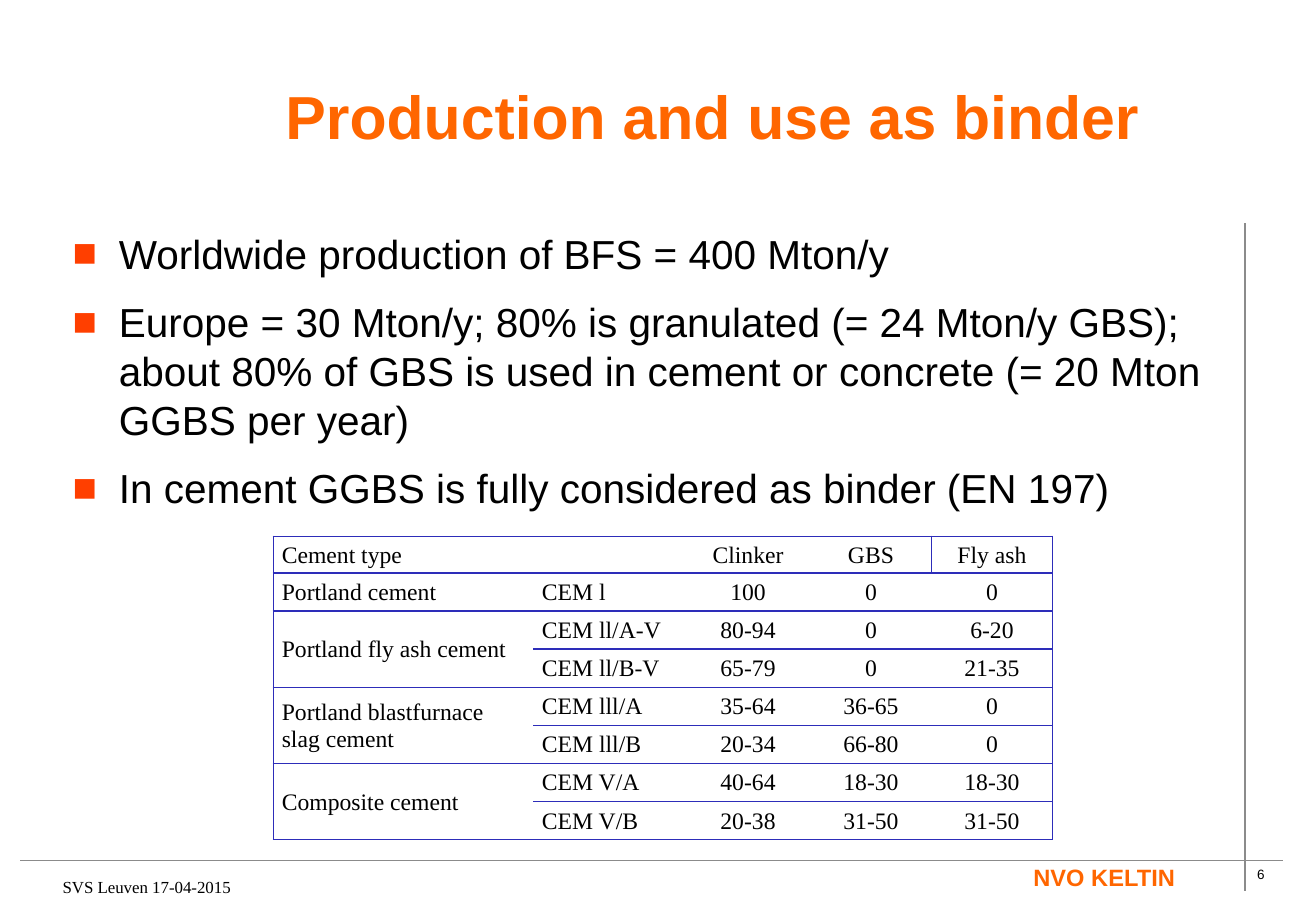
from dataclasses import dataclass
from typing import Any

from lxml import etree
from pptx import Presentation
from pptx import util as u
from pptx.dml.color import RGBColor
from pptx.enum import shapes, text
from pptx.oxml import ns

COLUMNS, ROWS = 130, 90
BLACK, WHITE, ORANGE, BULLET = "000000", "FFFFFF", "FF6600", "FF3F00"
RULE, BORDER = "8B8B8B", "2D2DB9"


@dataclass(frozen=True)
class Style:
    size: float
    font: str = "Arial"
    color: str = BLACK
    bold: bool = False


@dataclass(frozen=True)
class Label:
    words: str
    area: tuple[float, float, float, float]
    style: Style
    wrap: bool = False


@dataclass(frozen=True)
class Rule:
    start: tuple[float, float]
    end: tuple[float, float]


@dataclass(frozen=True)
class Cement:
    family: str
    grade: str
    clinker: str
    slag: str
    ash: str
    span: tuple[int, int] = (1, 1)

    def entries(self) -> list[str]:
        return [self.family, self.grade, self.clinker, self.slag, self.ash]


TITLE = Label("Production and use as binder", (27, 5, 94, 12), Style(36, color=ORANGE, bold=True), True)
FOOTERS = [
    Label("6", (123, 85, 4.1, 2.8), Style(8)),
    Label("NVO KELTIN", (100.9, 84.7, 21, 4.1), Style(14, color=ORANGE, bold=True), True),
    Label("SVS Leuven 17-04-2015", (5, 86, 35, 3.2), Style(10, "Times New Roman"), True),
]
RULES = [Rule((2, 85), (126.7, 85)), Rule((123, 88), (123, 22))]
FACTS_AREA, FACTS_STYLE = (6, 22, 115, 61), Style(24)
FACTS = [
    "Worldwide production of BFS = 400 Mton/y",
    "Europe = 30 Mton/y; 80% is granulated (= 24 Mton/y GBS); about 80% of GBS "
    "is used in cement or concrete (= 20 Mton GGBS per year)",
    "In cement GGBS is fully considered as binder (EN 197)",
]
CEMENT_STYLE = Style(14, "Times New Roman")
CEMENT_COLUMNS = [25.7, 15, 12.4, 11.9, 12]
HEADING_ROW, CEMENT_ROW = 3.6, 3.77
CEMENTS = [
    Cement("Cement type", "", "Clinker", "GBS", "Fly ash", (1, 2)),
    Cement("Portland cement", "CEM l", "100", "0", "0"),
    Cement("Portland fly ash cement", "CEM ll/A-V", "80-94", "0", "6-20", (2, 1)),
    Cement("", "CEM ll/B-V", "65-79", "0", "21-35"),
    Cement("Portland blastfurnace slag cement", "CEM lll/A", "35-64", "36-65", "0", (2, 1)),
    Cement("", "CEM lll/B", "20-34", "66-80", "0"),
    Cement("Composite cement", "CEM V/A", "40-64", "18-30", "18-30", (2, 1)),
    Cement("", "CEM V/B", "20-38", "31-50", "31-50"),
]

deck = Presentation()
deck.slide_width, deck.slide_height = u.Inches(10.83), u.Inches(7.5)


def across(columns: float) -> int:
    return round(deck.slide_width * columns / COLUMNS)


def down(rows: float) -> int:
    return round(deck.slide_height * rows / ROWS)


def place(area: tuple[float, float, float, float]) -> tuple[int, int, int, int]:
    left, top, width, height = area
    return across(left), down(top), across(width), down(height)


def rgb(color: str) -> RGBColor:
    return RGBColor.from_string(color)


def assign(target: Any, values: dict[str, Any]) -> None:
    for name, value in values.items():
        setattr(target, name, value)


def write(paragraph: Any, words: str, style: Style, **layout: Any) -> None:
    assign(paragraph, layout)
    run = paragraph.add_run()
    run.text = words
    assign(run.font, {"size": u.Pt(style.size), "name": style.font, "bold": style.bold})
    run.font.color.rgb = rgb(style.color)


def add_label(slide: Any, label: Label) -> None:
    frame = slide.shapes.add_textbox(*place(label.area)).text_frame
    frame.word_wrap = label.wrap
    write(frame.paragraphs[0], label.words, label.style)


def add_rule(slide: Any, rule: Rule) -> None:
    ends = [across(rule.start[0]), down(rule.start[1]), across(rule.end[0]), down(rule.end[1])]
    line = slide.shapes.add_connector(shapes.MSO_CONNECTOR.STRAIGHT, *ends)
    line.line.color.rgb = rgb(RULE)
    line.line.width = u.Pt(1)
    etree.SubElement(line._element.spPr, ns.qn("a:effectLst"))


def add_title(slide: Any) -> None:
    title = slide.shapes.title
    assign(title, dict(zip(("left", "top", "width", "height"), place(TITLE.area))))
    assign(title.text_frame, {
        "word_wrap": TITLE.wrap,
        "auto_size": text.MSO_AUTO_SIZE.NONE,
        "vertical_anchor": text.MSO_ANCHOR.TOP,
    })
    write(title.text_frame.paragraphs[0], TITLE.words, TITLE.style,
          alignment=text.PP_ALIGN.LEFT, line_spacing=1.3)


def add_bullet(paragraph: Any) -> None:
    properties = paragraph._p.get_or_add_pPr()
    indent = u.Inches(0.38)
    properties.set("marL", str(indent))
    properties.set("indent", str(-indent))
    color = etree.SubElement(properties, ns.qn("a:buClr"))
    etree.SubElement(color, ns.qn("a:srgbClr"), val=BULLET)
    etree.SubElement(properties, ns.qn("a:buFont"), typeface="Arial")
    etree.SubElement(properties, ns.qn("a:buChar"), char="■")


def add_facts(slide: Any) -> None:
    frame = slide.shapes.add_textbox(*place(FACTS_AREA)).text_frame
    frame.word_wrap = True
    for index, fact in enumerate(FACTS):
        paragraph = frame.add_paragraph() if index else frame.paragraphs[0]
        add_bullet(paragraph)
        write(paragraph, fact, FACTS_STYLE, line_spacing=1.0,
              space_before=u.Pt(12 if index else 0))


def add_borders(cell: Any, visible: str) -> None:
    properties = cell._tc.get_or_add_tcPr()
    for side in "LRTB":
        line = etree.SubElement(properties, ns.qn(f"a:ln{side}"), w=str(u.Pt(1)))
        if side in visible:
            fill = etree.SubElement(line, ns.qn("a:solidFill"))
            etree.SubElement(fill, ns.qn("a:srgbClr"), val=BORDER)
        else:
            etree.SubElement(line, ns.qn("a:noFill"))


def visible_sides(row: int, column: int) -> str:
    last = len(CEMENT_COLUMNS) - 1
    left = column == 0 or (row == 0 and column == last)
    right = column == last or (row == 0 and column == last - 1)
    return "TB" + "L" * left + "R" * right


def add_cements(slide: Any) -> None:
    heights = [HEADING_ROW] + [CEMENT_ROW] * (len(CEMENTS) - 1)
    area = (27, 53, sum(CEMENT_COLUMNS), sum(heights))
    table = slide.shapes.add_table(len(CEMENTS), len(CEMENT_COLUMNS), *place(area)).table
    assign(table, {"first_row": False, "horz_banding": False})
    for column, width in zip(table.columns, CEMENT_COLUMNS):
        column.width = across(width)
    for r, cement in enumerate(CEMENTS):
        table.rows[r].height = down(heights[r])
        for c, entry in enumerate(cement.entries()):
            cell = table.cell(r, c)
            add_borders(cell, visible_sides(r, c))
            cell.fill.solid()
            cell.fill.fore_color.rgb = rgb(WHITE)
            assign(cell, {
                "margin_left": u.Inches(0.07), "margin_right": u.Inches(0.07),
                "margin_top": 0, "margin_bottom": 0,
                "vertical_anchor": text.MSO_ANCHOR.MIDDLE,
            })
            if entry:
                alignment = text.PP_ALIGN.CENTER if c > 1 else text.PP_ALIGN.LEFT
                write(cell.text_frame.paragraphs[0], entry, CEMENT_STYLE,
                      alignment=alignment, line_spacing=u.Pt(16))
        if cement.span != (1, 1):
            rows, columns = cement.span
            table.cell(r, 0).merge(table.cell(r + rows - 1, columns - 1))


def main() -> None:
    slide = deck.slides.add_slide(deck.slide_layouts[5])
    for rule in RULES:
        add_rule(slide, rule)
    for label in FOOTERS:
        add_label(slide, label)
    add_title(slide)
    add_facts(slide)
    add_cements(slide)
    deck.save("out.pptx")


if __name__ == "__main__":
    main()
